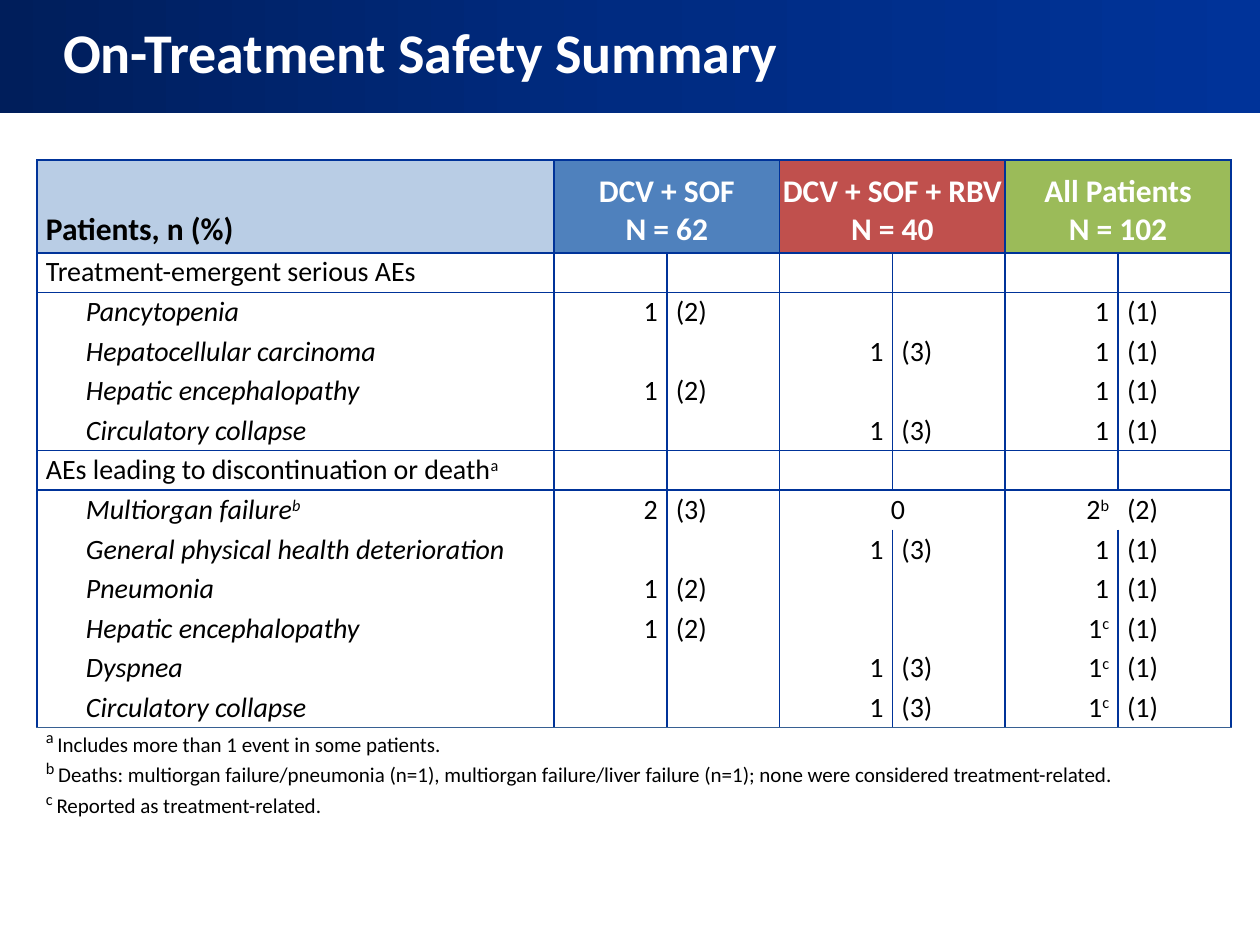
from copy import deepcopy

from pptx import Presentation
from pptx.dml.color import RGBColor
from pptx.enum.shapes import MSO_SHAPE
from pptx.enum.text import MSO_ANCHOR, PP_ALIGN
from pptx.oxml import parse_xml
from pptx.oxml.ns import nsdecls, qn
from pptx.util import Emu, Pt

FONT = "Calibri"
COLORS = {
    "white": "FFFFFF", "black": "000000", "rule": "003399", "end_rule": "376092",
    "label": "B9CDE5", "dual": "4F81BD", "triple": "C0504D", "all": "9BBB59",
    "band_left": "001E5B", "band_mid": "002B81", "band_right": "003399",
}
NO_GRID_STYLE = "{2D5ABB26-0587-4C30-8999-92F81FD0307C}"
GROUP_STARTS = (1, 3, 5)
HEADERS = [
    (0, ["Patients, n (%)"], "label"),
    (1, ["DCV + SOF", "N = 62"], "dual"),
    (3, ["DCV + SOF + RBV", "N = 40"], "triple"),
    (5, ["All Patients", "N = 102"], "all"),
]
SECTIONS = [
    ("Treatment-emergent serious AEs", [
        ("Pancytopenia", "1 (2)", "", "1 (1)"),
        ("Hepatocellular carcinoma", "", "1 (3)", "1 (1)"),
        ("Hepatic encephalopathy", "1 (2)", "", "1 (1)"),
        ("Circulatory collapse", "", "1 (3)", "1 (1)"),
    ]),
    ("AEs leading to discontinuation or death^a", [
        ("Multiorgan failure^b", "2 (3)", "0", "2^b (2)"),
        ("General physical health deterioration", "", "1 (3)", "1 (1)"),
        ("Pneumonia", "1 (2)", "", "1 (1)"),
        ("Hepatic encephalopathy", "1 (2)", "", "1^c (1)"),
        ("Dyspnea", "", "1 (3)", "1^c (1)"),
        ("Circulatory collapse", "", "1 (3)", "1^c (1)"),
    ]),
]
FOOTNOTES = [
    [("a ", "Includes more than 1 event in some patients."),
     ("b ", "Deaths: multiorgan failure/pneumonia (n=1), multiorgan failure/liver "
            "failure (n=1); none were considered treatment-related.")],
    [("c ", "Reported as treatment-related.")],
]


def px(n):
    return Emu(n * 914400 // 126)


def rgb(name):
    return RGBColor.from_string(COLORS[name])


def style_font(font, size, color="black", bold=False, italic=False):
    font.name, font.size, font.bold, font.italic = FONT, Pt(size), bold, italic
    font.color.rgb = rgb(color)


def add_run(p, text, raised=False):
    r = p.add_run()
    r.text = text
    if raised:
        r.font._element.set("baseline", "30000")
    return r


def add_band(s, width, height):
    band = s.shapes.add_shape(MSO_SHAPE.RECTANGLE, 0, 0, width, height)
    band.shadow.inherit = False
    band.line.fill.background()
    band.fill.gradient()
    band.fill.gradient_angle = 0
    stops = band._element.spPr.find(".//" + qn("a:gsLst"))
    stops.insert(1, deepcopy(stops[0]))
    for i, name in enumerate(("band_left", "band_mid", "band_right")):
        stop = band.fill.gradient_stops[i]
        stop.position = i / 2
        stop.color.rgb = rgb(name)
    s.shapes._spTree.insert(2, band._element)


def set_title(s, text, width, height):
    sp = s.shapes.title
    sp.left, sp.top, sp.width, sp.height = 0, 0, width, height
    tf = sp.text_frame
    tf.text = text
    tf.vertical_anchor = MSO_ANCHOR.MIDDLE
    tf.margin_left = px(63)
    p = tf.paragraphs[0]
    p.alignment = PP_ALIGN.LEFT
    p.line_spacing = 0.85
    style_font(p.font, 32, "white", bold=True)


def set_border(cell, side, color="rule"):
    cell._tc.get_or_add_tcPr().append(parse_xml(
        f'<a:{side} {nsdecls("a")} w="12700"><a:solidFill>'
        f'<a:srgbClr val="{COLORS[color]}"/></a:solidFill></a:{side}>'))


def format_cell(cell, row, col, last, fill):
    right = col + (cell.span_width if cell.is_merge_origin else 1) - 1
    if row <= last:
        if col in (0, *GROUP_STARTS):
            set_border(cell, "lnL")
        if right in (0, 2, 4, 6):
            set_border(cell, "lnR")
    if row in (0, 1, 6):
        set_border(cell, "lnT")
    elif row > last:
        set_border(cell, "lnT", "end_rule")
    if row in (0, 5):
        set_border(cell, "lnB")
    elif row == last:
        set_border(cell, "lnB", "end_rule")
    cell.fill.solid()
    cell.fill.fore_color.rgb = rgb(fill)
    cell.margin_left = cell.margin_right = px(9)
    cell.margin_top = cell.margin_bottom = 0
    cell.vertical_anchor = MSO_ANCHOR.MIDDLE


def write_cell(cell, text, align=PP_ALIGN.LEFT, italic=False, left=0, first=0):
    p = cell.text_frame.paragraphs[0]
    p.alignment = align
    style_font(p.font, 16, italic=italic)
    for i, part in enumerate(text.split("^")):
        add_run(p, part, raised=i % 2 == 1)
    pPr = p._p.get_or_add_pPr()
    pPr.set("marL", str(px(left)))
    pPr.set("indent", str(px(first)))
    return p


def write_header(cell, lines, col):
    tf = cell.text_frame
    tf.text = "\n".join(lines)
    cell.vertical_anchor = MSO_ANCHOR.BOTTOM
    cell.margin_bottom = px(4)
    if col == 3:
        cell.margin_left = cell.margin_right = 0
    for p in tf.paragraphs:
        p.alignment = PP_ALIGN.CENTER if col else PP_ALIGN.LEFT
        style_font(p.font, 18, "white" if col else "black", bold=True)


def write_values(table, row, values):
    for col, value in zip(GROUP_STARTS, values):
        count, _, percent = value.partition(" ")
        if percent:
            write_cell(table.cell(row, col), count, PP_ALIGN.RIGHT)
            write_cell(table.cell(row, col + 1), percent)
        elif count:
            write_cell(table.cell(row, col), count, PP_ALIGN.CENTER, first=11)


def write_footnotes(cell):
    tf = cell.text_frame
    for i, notes in enumerate(FOOTNOTES):
        p = tf.add_paragraph() if i else tf.paragraphs[0]
        p.line_spacing = 0.9
        for j, (mark, text) in enumerate(notes):
            if j:
                p.add_line_break()
            style_font(add_run(p, mark, raised=True).font, 16)
            style_font(add_run(p, text).font, 12)


def add_safety_table(s):
    rows = [row for heading, items in SECTIONS for row in [(heading,), *items]]
    last = len(rows)
    frame = s.shapes.add_table(last + 2, 7, px(37), px(160), px(1194), px(618))
    table = frame.table
    table._tbl.tblPr.find(qn("a:tableStyleId")).text = NO_GRID_STYLE
    table.first_row = table.horz_banding = False
    for i, col in enumerate(table.columns):
        col.width = px(677) // 6 if i else px(517)
    for row in table.rows:
        row.height = px(475) // last
    table.rows[0].height, table.rows[last + 1].height = px(93), px(50)

    for col in GROUP_STARTS:
        table.cell(0, col).merge(table.cell(0, col + 1))
    for i, row in enumerate(rows, 1):
        for col, value in zip(GROUP_STARTS, row[1:]):
            if value and " " not in value:
                table.cell(i, col).merge(table.cell(i, col + 1))
    table.cell(last + 1, 0).merge(table.cell(last + 1, 6))

    header_fills = {col: fill for col, _, fill in HEADERS}
    for i in range(last + 2):
        for col in range(7):
            cell = table.cell(i, col)
            if not cell.is_spanned:
                fill = "white" if i else header_fills[col]
                format_cell(cell, i, col, last, fill)
    for col, lines, _ in HEADERS:
        write_header(table.cell(0, col), lines, col)
    for i, (name, *values) in enumerate(rows, 1):
        if values:
            write_cell(table.cell(i, 0), name, italic=True, left=40)
            write_values(table, i, values)
        else:
            write_cell(table.cell(i, 0), name).line_spacing = 0.9
    write_footnotes(table.cell(last + 1, 0))


def main():
    prs = Presentation()
    prs.slide_width, prs.slide_height = px(1260), px(945)
    s = prs.slides.add_slide(prs.slide_layouts[5])
    add_band(s, prs.slide_width, px(113))
    set_title(s, "On-Treatment Safety Summary", prs.slide_width, px(113))
    add_safety_table(s)
    prs.save("out.pptx")


if __name__ == "__main__":
    main()
